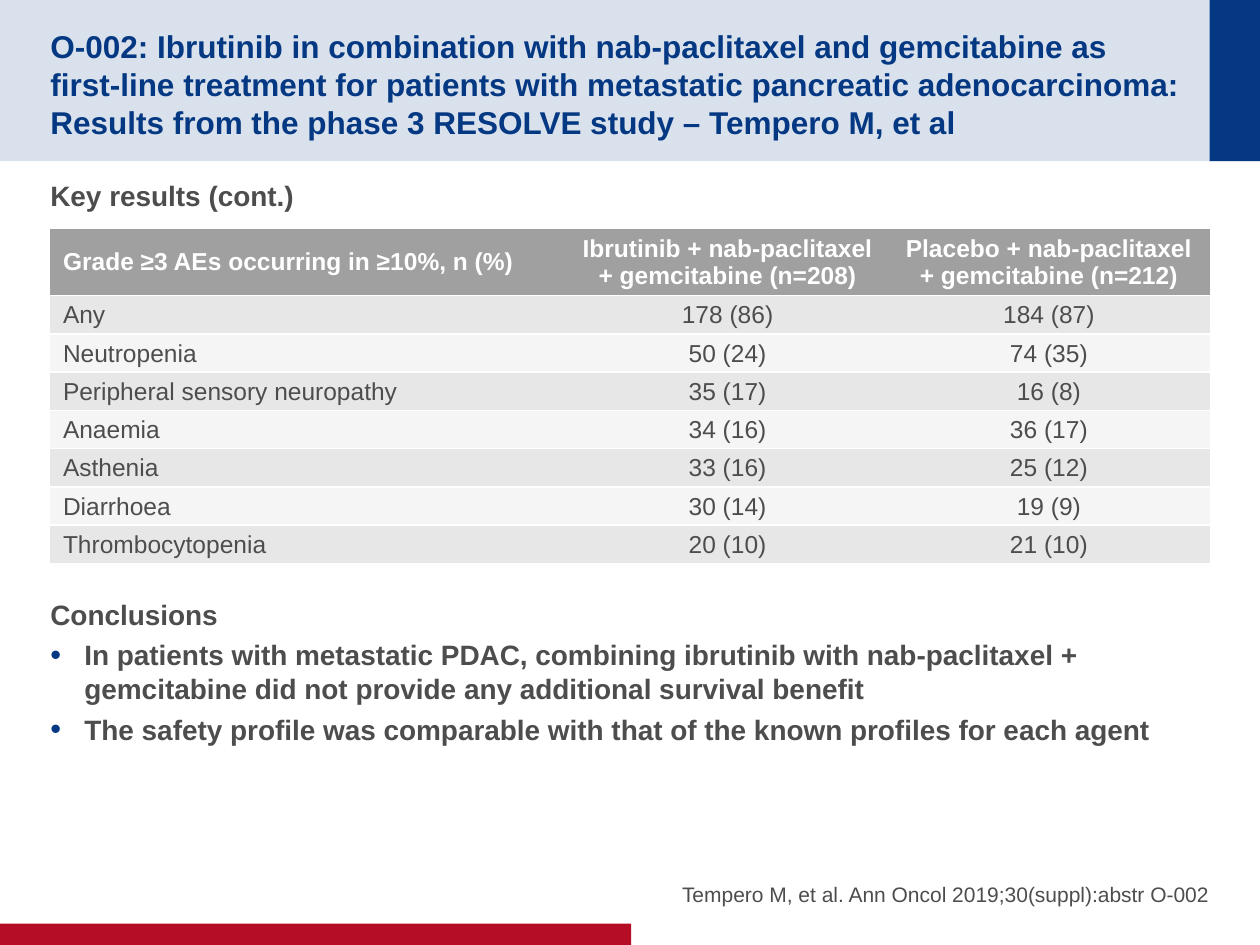
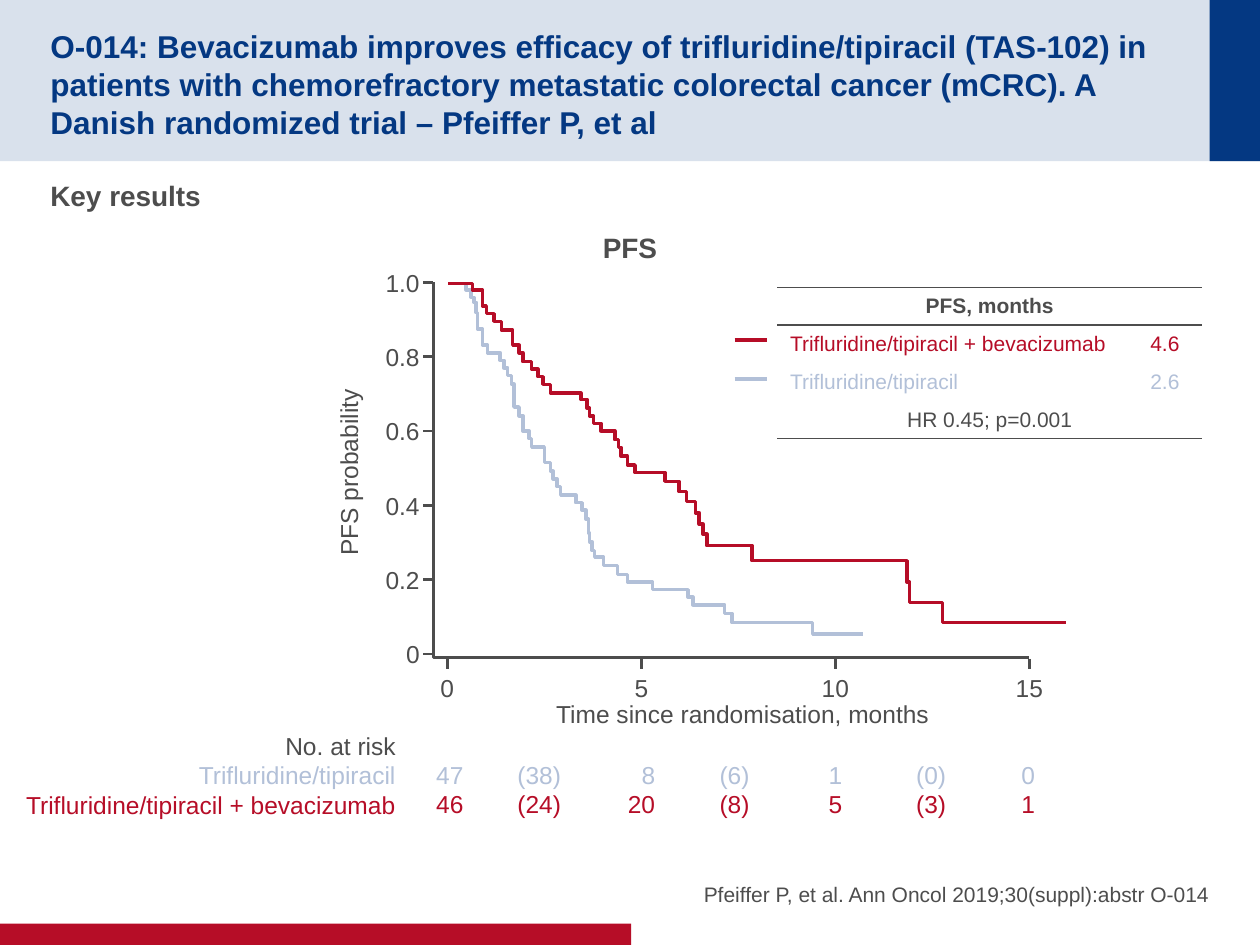
from typing import NamedTuple

from lxml import etree
from pptx import Presentation
from pptx.dml.color import RGBColor
from pptx.enum.shapes import MSO_CONNECTOR, MSO_SHAPE
from pptx.enum.text import MSO_ANCHOR, PP_ALIGN
from pptx.oxml.ns import qn
from pptx.util import Inches, Pt

LEFT, CENTER, RIGHT = PP_ALIGN.LEFT, PP_ALIGN.CENTER, PP_ALIGN.RIGHT
TOP, MIDDLE, BOTTOM = MSO_ANCHOR.TOP, MSO_ANCHOR.MIDDLE, MSO_ANCHOR.BOTTOM
STRAIGHT, RECTANGLE = MSO_CONNECTOR.STRAIGHT, MSO_SHAPE.RECTANGLE

NAVY = RGBColor(0x04, 0x38, 0x82)
PALE_NAVY = RGBColor(0xD9, 0xE1, 0xEC)
RED = RGBColor(0xB6, 0x0D, 0x27)
LIGHT_BLUE = RGBColor(0xB2, 0xC0, 0xD8)
DARK_GREY = RGBColor(0x4D, 0x4D, 0x4D)
HEADER_GREY = RGBColor(0xA0, 0xA0, 0xA0)
ODD_ROW_GREY = RGBColor(0xE7, 0xE7, 0xE7)
EVEN_ROW_GREY = RGBColor(0xF5, 0xF5, 0xF5)
WHITE = RGBColor(0xFF, 0xFF, 0xFF)
FONT = "Arial"

NO_INSETS = (0, 0, 0, 0)
SMALL_INSETS = (0.04, 0.04, 0.04, 0.04)
DEFAULT_INSETS = (0.1, 0.05, 0.1, 0.05)
AE_INSETS = (0.1, 0.04, 0.1, 0.03)


class Box(NamedTuple):
    left: float
    top: float
    width: float
    height: float

    def lengths(self) -> list:
        return [Inches(value) for value in self]


class Line(NamedTuple):
    """One paragraph; a colour of None takes that of its text block."""
    text: str
    color: RGBColor | None = None
    bullet: bool = False
    before: float = 0


class RiskCount(NamedTuple):
    center: float
    control: str
    bevacizumab: str
    align: PP_ALIGN = CENTER


class Survival(NamedTuple):
    """A step curve: at each x of drops the level falls to y."""
    color: RGBColor
    drops: list
    end: float


AE_ROWS = [
    ("Grade ≥3 AEs occurring in ≥10%, n (%)",
     "Ibrutinib + nab-paclitaxel + gemcitabine (n=208)",
     "Placebo + nab-paclitaxel + gemcitabine (n=212)"),
    ("Any", "178 (86)", "184 (87)"),
    ("Neutropenia", "50 (24)", "74 (35)"),
    ("Peripheral sensory neuropathy", "35 (17)", "16 (8)"),
    ("Anaemia", "34 (16)", "36 (17)"),
    ("Asthenia", "33 (16)", "25 (12)"),
    ("Diarrhoea", "30 (14)", "19 (9)"),
    ("Thrombocytopenia", "20 (10)", "21 (10)"),
]

CONTROL_ARM = "Trifluridine/tipiracil"
BEVACIZUMAB_ARM = "Trifluridine/tipiracil + bevacizumab"
RISK_COUNTS = [
    RiskCount(3.57, "47", "46"),
    RiskCount(4.28, "(38)", "(24)"),
    RiskCount(5.09, "8", "20", RIGHT),
    RiskCount(5.83, "(6)", "(8)"),
    RiskCount(6.63, "1", "5"),
    RiskCount(7.39, "(0)", "(3)"),
    RiskCount(8.16, "0", "1"),
]
CURVE_START = (3.56, 2.25)
SURVIVALS = [
    Survival(LIGHT_BLUE, [
        (3.7, 2.3), (3.74, 2.36), (3.76, 2.4), (3.78, 2.48), (3.79, 2.61),
        (3.83, 2.74), (3.87, 2.8), (3.97, 2.86), (4, 2.92), (4.03, 2.98),
        (4.06, 3.05), (4.08, 3.23), (4.12, 3.3), (4.15, 3.42), (4.2, 3.48),
        (4.22, 3.55), (4.32, 3.67), (4.37, 3.74), (4.39, 3.8), (4.42, 3.86),
        (4.45, 3.93), (4.57, 3.99), (4.62, 4.05), (4.65, 4.12), (4.67, 4.23),
        (4.68, 4.3), (4.7, 4.37), (4.72, 4.42), (4.79, 4.49), (4.9, 4.56),
        (4.98, 4.62), (5.18, 4.68), (5.46, 4.74), (5.5, 4.8), (5.75, 4.87),
        (5.81, 4.94), (6.45, 5.03)], 6.85),
    Survival(RED, [
        (3.75, 2.3), (3.83, 2.43), (3.86, 2.49), (3.92, 2.55), (3.98, 2.62),
        (4.07, 2.74), (4.12, 2.8), (4.15, 2.87), (4.22, 2.93), (4.27, 2.99),
        (4.31, 3.05), (4.37, 3.12), (4.61, 3.17), (4.66, 3.24), (4.68, 3.3),
        (4.71, 3.36), (4.77, 3.42), (4.88, 3.49), (4.91, 3.55), (4.93, 3.62),
        (4.98, 3.69), (5.04, 3.75), (5.28, 3.82), (5.39, 3.9), (5.45, 3.98),
        (5.52, 4.07), (5.55, 4.16), (5.58, 4.24), (5.61, 4.33), (5.97, 4.45),
        (7.2, 4.62), (7.22, 4.78), (7.48, 4.94)], 8.46),
]


def add_bullet(paragraph) -> None:
    properties = paragraph._p.get_or_add_pPr()
    properties.set("marL", str(Inches(0.27)))
    properties.set("indent", str(-Inches(0.27)))
    color = etree.SubElement(properties, qn("a:buClr"))
    etree.SubElement(color, qn("a:srgbClr"), val=str(NAVY))
    etree.SubElement(properties, qn("a:buSzPct"), val="110000")
    etree.SubElement(properties, qn("a:buFont"), typeface=FONT)
    etree.SubElement(properties, qn("a:buChar"), char="•")


def write_text(frame, text: str | list[Line], *, size: int = 14, color: RGBColor = DARK_GREY,
               bold: bool = False, align: PP_ALIGN = LEFT, after: float = 0) -> None:
    lines = [Line(text)] if isinstance(text, str) else text
    for index, line in enumerate(lines):
        paragraph = frame.add_paragraph() if index else frame.paragraphs[0]
        paragraph.alignment = align
        paragraph.space_before, paragraph.space_after = Pt(line.before), Pt(after)
        if line.bullet:
            add_bullet(paragraph)
        run = paragraph.add_run()
        run.text = line.text
        run.font.name, run.font.size, run.font.bold = FONT, Pt(size), bold
        run.font.color.rgb = line.color or color


def set_insets(holder, insets: tuple) -> None:
    (holder.margin_left, holder.margin_top,
     holder.margin_right, holder.margin_bottom) = [Inches(inset) for inset in insets]


def add_text(slide, box: Box, text: str | list[Line], *, anchor: MSO_ANCHOR = TOP,
             insets: tuple = DEFAULT_INSETS, wrap: bool = False, rotation: int = 0,
             **text_format) -> None:
    label = slide.shapes.add_textbox(*box.lengths())
    label.rotation = rotation
    frame = label.text_frame
    frame.word_wrap, frame.vertical_anchor = wrap, anchor
    set_insets(frame, insets)
    write_text(frame, text, **text_format)


def add_band(slide, box: Box, color: RGBColor) -> None:
    band = slide.shapes.add_shape(RECTANGLE, *box.lengths())
    band.shadow.inherit = False
    band.fill.solid()
    band.fill.fore_color.rgb = color
    band.line.fill.background()


def add_line(slide, start: tuple, end: tuple, color: RGBColor = DARK_GREY,
             width: float = 1.5) -> None:
    line = slide.shapes.add_connector(STRAIGHT, *[Inches(v) for v in (*start, *end)])
    line.line.color.rgb, line.line.width = color, Pt(width)
    etree.SubElement(line._element.spPr, qn("a:effectLst"))


def add_polyline(slide, points: list, color: RGBColor = DARK_GREY, width: float = 1.5) -> None:
    corners = [(Inches(x), Inches(y)) for x, y in points]
    builder = slide.shapes.build_freeform(*corners[0])
    builder.add_line_segments(corners[1:], close=False)
    outline = builder.convert_to_shape()
    outline.shadow.inherit = False
    outline.fill.background()
    outline.line.color.rgb, outline.line.width = color, Pt(width)


def format_cell(cell, text: str, *, fill: RGBColor | None = None, top: RGBColor | None = None,
                bottom: RGBColor | None = None, insets: tuple = DEFAULT_INSETS,
                **text_format) -> None:
    """Write a cell; a border or fill of None is drawn empty."""
    cell.vertical_anchor = MIDDLE
    set_insets(cell, insets)
    write_text(cell.text_frame, text, **text_format)
    properties = cell._tc.get_or_add_tcPr()
    for side, color in (("L", None), ("R", None), ("T", top), ("B", bottom)):
        border = etree.SubElement(properties, qn(f"a:ln{side}"), w=str(Pt(1)))
        if color is None:
            etree.SubElement(border, qn("a:noFill"))
        else:
            paint = etree.SubElement(border, qn("a:solidFill"))
            etree.SubElement(paint, qn("a:srgbClr"), val=str(color))
    if fill is None:
        cell.fill.background()
    else:
        cell.fill.solid()
        cell.fill.fore_color.rgb = fill


def add_plain_table(slide, box: Box, row_count: int, widths: list[float]):
    table = slide.shapes.add_table(row_count, len(widths), *box.lengths()).table
    table.first_row = table.horz_banding = False
    for column, width in zip(table.columns, widths):
        column.width = Inches(width)
    return table


def add_study_slide(deck, title: str, body: list[Line], citation: str):
    slide = deck.slides.add_slide(deck.slide_layouts[6])
    add_band(slide, Box(0, 0, 10, 1.28), PALE_NAVY)
    add_band(slide, Box(9.6, 0, 0.4, 1.28), NAVY)
    add_band(slide, Box(0, 7.33, 5.01, 0.17), RED)
    add_text(slide, Box(0.4, 0.2, 9.01, 0.88), title, size=18, color=NAVY, bold=True,
             anchor=MIDDLE, insets=(0, 0.05, 0, 0), wrap=True)
    add_text(slide, Box(0.4, 1.37, 9.2, 5.19), body, size=16, bold=True, after=4,
             insets=(0, 0.05, 0, 0.05), wrap=True)
    add_text(slide, Box(4.92, 6.67, 4.68, 0.53), citation, size=12, align=RIGHT, after=4,
             anchor=BOTTOM, insets=NO_INSETS, wrap=True)
    return slide


def add_adverse_events(slide) -> None:
    table = add_plain_table(slide, Box(0.4, 1.81, 9.2, 2.59), len(AE_ROWS), [4.1, 2.55, 2.55])
    for row, values in enumerate(AE_ROWS):
        header = row == 0
        table.rows[row].height = Inches(0.51) if header else Inches(2.08 / (len(AE_ROWS) - 1))
        fill = HEADER_GREY if header else ODD_ROW_GREY if row % 2 else EVEN_ROW_GREY
        for column, value in enumerate(values):
            format_cell(table.cell(row, column), value, fill=fill, top=WHITE, bottom=WHITE,
                        insets=AE_INSETS, color=WHITE if header else DARK_GREY,
                        bold=header, align=CENTER if column else LEFT)


def add_axes(slide) -> None:
    add_polyline(slide, [(3.44, 2.24), (3.44, 5.22), (8.17, 5.22)])
    for index, label in enumerate(["1.0", "0.8", "0.6", "0.4", "0.2", "0"]):
        y = 2.24 + index * 0.59
        add_line(slide, (3.36, y), (3.44, y))
        add_text(slide, Box(2.96, y - 0.17, 0.47, 0.34), label, align=RIGHT, anchor=MIDDLE)
    for index, label in enumerate(["0", "5", "10", "15"]):
        x = 3.55 + index * 1.54
        add_line(slide, (x, 5.23), (x, 5.31))
        add_text(slide, Box(x - 0.15, 5.3, 0.3, 0.3), label, align=CENTER, insets=SMALL_INSETS)
    add_text(slide, Box(4.31, 5.5, 3.17, 0.34), "Time since randomisation, months", align=CENTER)
    add_text(slide, Box(2.06, 3.59, 1.41, 0.32), "PFS probability", align=CENTER,
             anchor=MIDDLE, insets=SMALL_INSETS, rotation=270)


def add_survival(slide, survival: Survival) -> None:
    points = [CURVE_START]
    for x, y in survival.drops:
        points += [(x, points[-1][1]), (x, y)]
    points.append((survival.end, points[-1][1]))
    add_polyline(slide, points, survival.color, 2)


def add_risk_counts(slide) -> None:
    add_text(slide, Box(0.09, 5.75, 3.15, 0.81),
             [Line("No. at risk"), Line(CONTROL_ARM, LIGHT_BLUE), Line(BEVACIZUMAB_ARM, RED)],
             align=RIGHT)
    for count in RISK_COUNTS:
        width = 0.43 if count.control.startswith("(") else 0.3
        add_text(slide, Box(count.center - width / 2, 5.99, width, 0.55),
                 [Line(count.control, LIGHT_BLUE), Line(count.bevacizumab, RED)],
                 align=count.align, insets=SMALL_INSETS)


def add_pfs_summary(slide) -> None:
    table = add_plain_table(slide, Box(6.17, 2.28, 3.37, 1.2), 4, [2.78, 0.59])
    for row in (0, 3):
        table.cell(row, 0).merge(table.cell(row, 1))
    format_cell(table.cell(0, 0), "PFS, months", size=12, bold=True, align=CENTER,
                top=DARK_GREY, bottom=DARK_GREY)
    format_cell(table.cell(3, 0), "HR 0.45; p=0.001", size=12, align=CENTER, bottom=DARK_GREY)
    for row in (0, 3):
        format_cell(table.cell(row, 1), [], top=None if row else DARK_GREY, bottom=DARK_GREY)
    arms = [(BEVACIZUMAB_ARM, "4.6", RED), (CONTROL_ARM, "2.6", LIGHT_BLUE)]
    for row, (arm, months, color) in enumerate(arms, start=1):
        top = DARK_GREY if row == 1 else None
        format_cell(table.cell(row, 0), arm, size=12, color=color, top=top)
        format_cell(table.cell(row, 1), months, size=12, color=color, align=CENTER, top=top)
        y = 2.39 + row * 0.31
        add_line(slide, (5.83, y), (6.09, y), color, 2)


def main() -> None:
    deck = Presentation()
    deck.slide_width, deck.slide_height = Inches(10), Inches(7.5)

    resolve = add_study_slide(
        deck,
        "O-002: Ibrutinib in combination with nab-paclitaxel and gemcitabine as first-line "
        "treatment for patients with metastatic pancreatic adenocarcinoma: Results from the "
        "phase 3 RESOLVE study – Tempero M, et al",
        [Line("Key results (cont.)"),
         Line("Conclusions", before=216),
         Line("In patients with metastatic PDAC, combining ibrutinib with nab-paclitaxel + "
              "gemcitabine did not provide any additional survival benefit", bullet=True),
         Line("The safety profile was comparable with that of the known profiles for each agent",
              bullet=True)],
        "Tempero M, et al. Ann Oncol 2019;30(suppl):abstr O-002")
    add_adverse_events(resolve)

    danish = add_study_slide(
        deck,
        "O-014: Bevacizumab improves efficacy of trifluridine/tipiracil (TAS-102) in patients "
        "with chemorefractory metastatic colorectal cancer (mCRC). A Danish randomized trial – "
        "Pfeiffer P, et al",
        [Line("Key results")],
        "Pfeiffer P, et al. Ann Oncol 2019;30(suppl):abstr O-014")
    add_text(danish, Box(4.68, 1.78, 0.64, 0.37), "PFS", size=16, bold=True, align=CENTER)
    add_axes(danish)
    add_risk_counts(danish)
    add_pfs_summary(danish)
    for survival in SURVIVALS:
        add_survival(danish, survival)

    deck.save("out.pptx")


if __name__ == "__main__":
    main()
